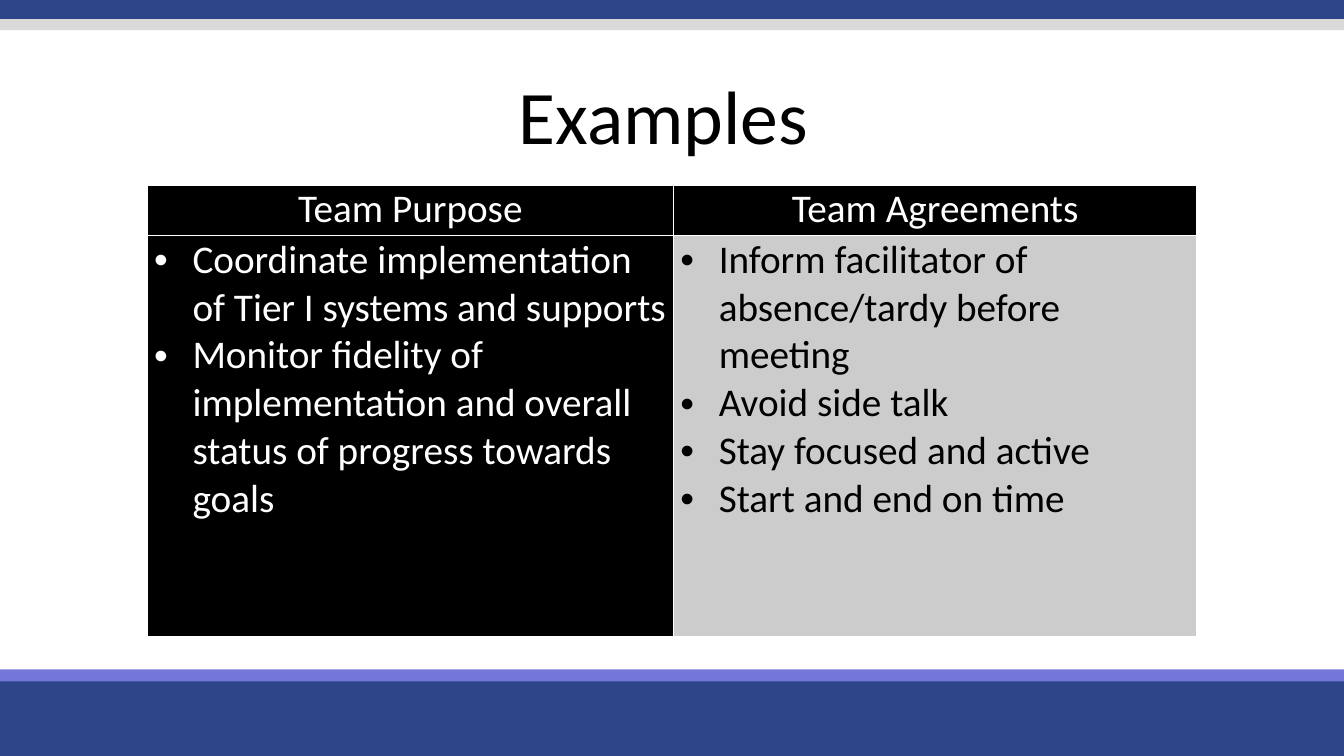
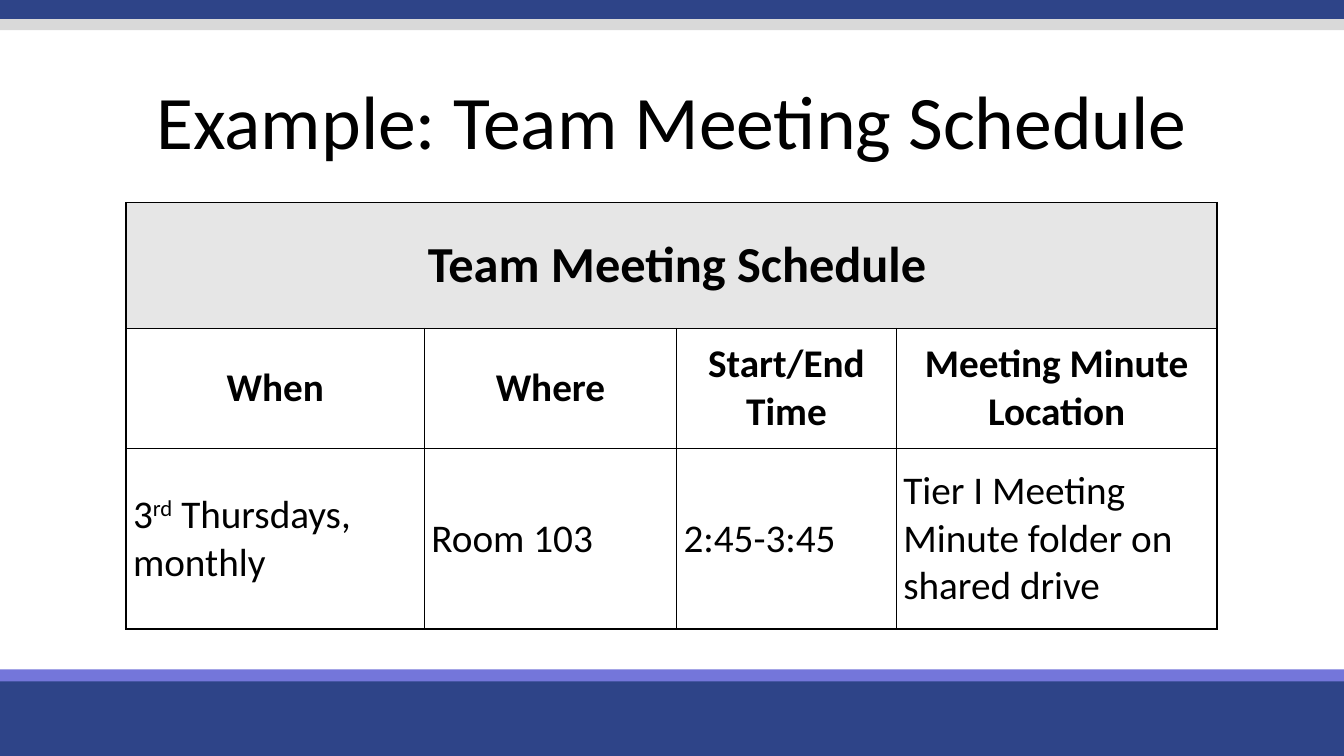
from dataclasses import dataclass

from lxml import etree
from pptx import Presentation
from pptx import util as u
from pptx.dml.color import RGBColor
from pptx.enum import shapes, text
from pptx.oxml import ns

COLORS = {
    "navy": "2E4488",
    "violet": "7476DA",
    "silver": "D9D9D9",
    "black": "000000",
    "white": "FFFFFF",
    "body_gray": "CCCCCC",
    "header_gray": "E6E6E6",
}
FONT = "Calibri"
SLIDE_WIDTH, SLIDE_HEIGHT = 13.33, 7.5
CELL_MARGIN = 0.07
BULLET_INDENT = 0.38


@dataclass
class Band:
    top: float
    height: float
    color: str


@dataclass
class Cell:
    """Table cell; text between two ^ marks is superscript."""
    lines: list[str]
    fill: str | None = None
    color: str = "black"
    size: int = 28
    bold: bool = False
    centered: bool = False
    bulleted: bool = False
    span: int = 1


@dataclass
class Grid:
    left: float
    top: float
    columns: list[float]
    rows: list[float]
    border: str
    middle: bool
    cells: list[list[Cell]]


@dataclass
class Page:
    title: str
    title_top: float
    title_height: float
    grid: Grid


BANDS = [
    Band(6.7, 0.8, "navy"),
    Band(6.64, 0.12, "violet"),
    Band(-0.03, 0.22, "navy"),
    Band(0.19, 0.11, "silver"),
]


def rgb(name: str) -> RGBColor:
    return RGBColor.from_string(COLORS[name])


def style_run(run, size: int, color: str, bold: bool = False) -> None:
    run.font.name = FONT
    run.font.size = u.Pt(size)
    run.font.bold = bold
    run.font.color.rgb = rgb(color)


def add_bands(slide) -> None:
    for band in BANDS:
        shape = slide.shapes.add_shape(
            shapes.MSO_SHAPE.RECTANGLE, 0, u.Inches(band.top),
            u.Inches(SLIDE_WIDTH), u.Inches(band.height))
        shape.shadow.inherit = False
        shape.fill.solid()
        shape.fill.fore_color.rgb = rgb(band.color)
        shape.line.fill.background()


def add_title(slide, page: Page) -> None:
    box = slide.shapes.add_textbox(
        0, u.Inches(page.title_top),
        u.Inches(SLIDE_WIDTH), u.Inches(page.title_height))
    frame = box.text_frame
    frame.word_wrap = True
    frame.vertical_anchor = text.MSO_ANCHOR.TOP
    frame.text = page.title
    paragraph = frame.paragraphs[0]
    paragraph.alignment = text.PP_ALIGN.CENTER
    paragraph.line_spacing = 0.9
    style_run(paragraph.runs[0], 54, "black")


def add_bullet(paragraph) -> None:
    properties = paragraph._p.get_or_add_pPr()
    properties.set("marL", str(u.Inches(BULLET_INDENT)))
    properties.set("indent", str(-u.Inches(BULLET_INDENT)))
    etree.SubElement(properties, ns.qn("a:buFont"), typeface="Arial")
    etree.SubElement(properties, ns.qn("a:buChar"), char="•")


def set_borders(cell, color: str) -> None:
    properties = cell._tc.get_or_add_tcPr()
    for index, side in enumerate("LRTB"):
        line = etree.Element(ns.qn(f"a:ln{side}"), w=str(u.Pt(1)))
        fill = etree.SubElement(line, ns.qn("a:solidFill"))
        etree.SubElement(fill, ns.qn("a:srgbClr"), val=COLORS[color])
        properties.insert(index, line)


def fill_cell(cell, content: Cell) -> None:
    if content.fill:
        cell.fill.solid()
        cell.fill.fore_color.rgb = rgb(content.fill)
    frame = cell.text_frame
    frame.text = "\n".join(content.lines)
    for paragraph, line in zip(frame.paragraphs, content.lines):
        if content.bulleted:
            add_bullet(paragraph)
        paragraph.alignment = (text.PP_ALIGN.CENTER if content.centered
                               else text.PP_ALIGN.LEFT)
        parts = line.split("^")
        paragraph.text = parts[0]
        for part in parts[1:]:
            paragraph.add_run().text = part
        for index, run in enumerate(paragraph.runs):
            style_run(run, content.size, content.color, content.bold)
            if index % 2:
                run.font._element.set("baseline", "30000")


def add_grid(slide, grid: Grid) -> None:
    table = slide.shapes.add_table(
        len(grid.rows), len(grid.columns),
        u.Inches(grid.left), u.Inches(grid.top),
        u.Inches(sum(grid.columns)), u.Inches(sum(grid.rows))).table
    table.first_row = False
    table.horz_banding = False
    for column, width in zip(table.columns, grid.columns):
        column.width = u.Inches(width)
    for row, height in zip(table.rows, grid.rows):
        row.height = u.Inches(height)
    for cell in table.iter_cells():
        cell.margin_left = cell.margin_right = u.Inches(CELL_MARGIN)
        cell.margin_top = cell.margin_bottom = 0
        cell.vertical_anchor = (text.MSO_ANCHOR.MIDDLE if grid.middle
                                else text.MSO_ANCHOR.TOP)
        cell.fill.background()
        set_borders(cell, grid.border)
    for row_index, contents in enumerate(grid.cells):
        for column_index, content in enumerate(contents):
            cell = table.cell(row_index, column_index)
            if content.span > 1:
                cell.merge(table.cell(row_index, column_index + content.span - 1))
            fill_cell(cell, content)


# Purpose and agreements
EXAMPLES = Grid(
    1.46, 1.84, [5.22, 5.19], [0.5, 3.98], "white", False,
    [
        [Cell([heading], fill="black", color="white", centered=True)
         for heading in ("Team Purpose", "Team Agreements")],
        [
            Cell(["Coordinate implementation of Tier I systems and supports",
                  "Monitor fidelity of implementation and overall status of "
                  "progress towards goals"],
                 fill="black", color="white", bulleted=True),
            Cell(["Inform facilitator of absence/tardy before meeting",
                  "Avoid side talk",
                  "Stay focused and active",
                  "Start and end on time"],
                 fill="body_gray", bulleted=True),
        ],
    ])

# Meeting schedule
SCHEDULE = Grid(
    1.25, 2.01, [2.96, 2.5, 2.18, 3.18], [1.25, 1.19, 1.79], "black", True,
    [
        [Cell([" Team Meeting Schedule"], fill="header_gray", size=36,
              bold=True, centered=True, span=4)],
        [Cell([heading], bold=True, centered=True)
         for heading in ("When", "Where", "Start/End Time",
                         "Meeting Minute Location")],
        [Cell([entry])
         for entry in ("3^rd^ Thursdays, monthly", "Room 103", "2:45-3:45",
                       "Tier I Meeting Minute folder on shared drive")],
    ])

PAGES = [
    Page("Examples ", 0.74, 0.77, EXAMPLES),
    Page("Example: Team Meeting Schedule", 0.79, 0.87, SCHEDULE),
]


def main() -> None:
    presentation = Presentation()
    presentation.slide_width = u.Inches(SLIDE_WIDTH)
    presentation.slide_height = u.Inches(SLIDE_HEIGHT)
    for page in PAGES:
        slide = presentation.slides.add_slide(presentation.slide_layouts[6])
        add_bands(slide)
        add_title(slide, page)
        add_grid(slide, page.grid)
    presentation.save("out.pptx")


if __name__ == "__main__":
    main()
